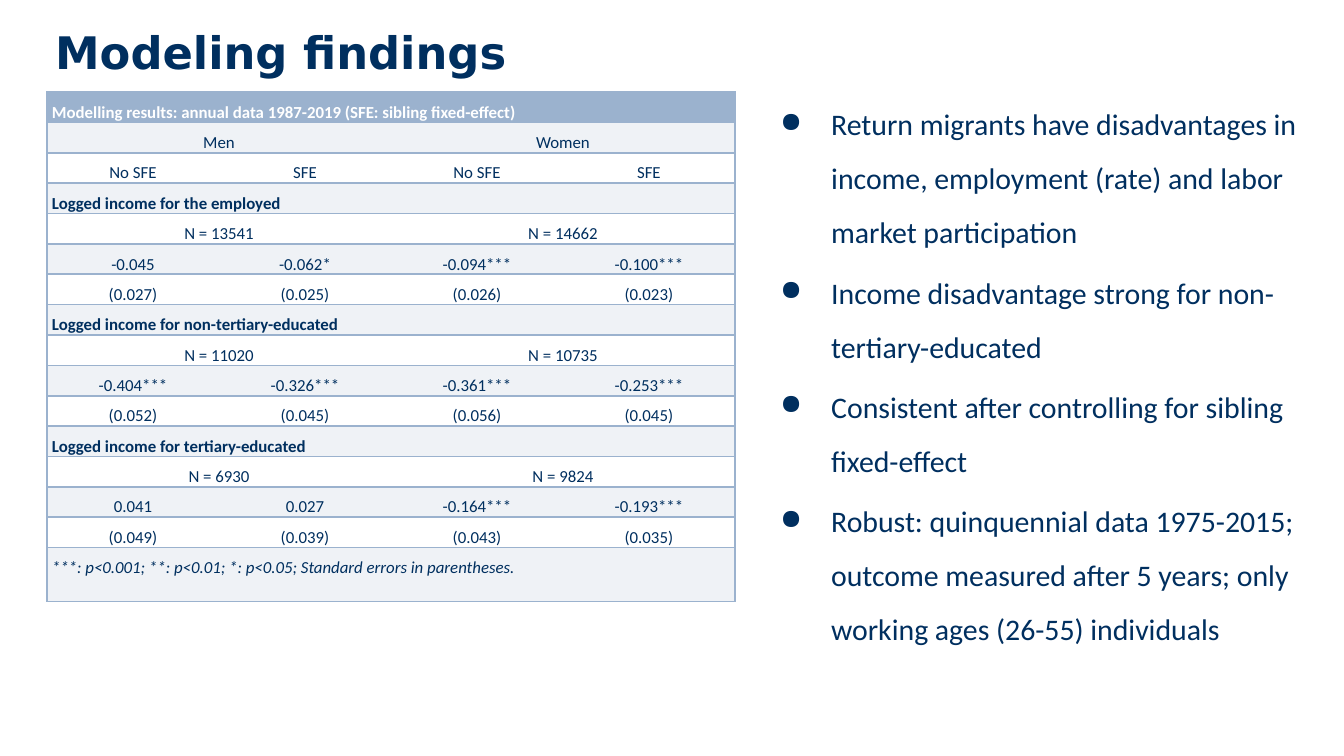
from lxml import etree
from pptx import Presentation, util as u
from pptx.dml.color import RGBColor
from pptx.enum import text
from pptx.oxml import ns

PX = 914400 / 134.4
NAVY, STEEL, PALE, WHITE = "002F5F", "9BB2CE", "EFF2F6", "FFFFFF"
COLUMNS = 4

# Each row shares the table's columns equally among its entries.
RESULTS = [
    ["Modelling results: annual data 1987-2019 (SFE: sibling fixed-effect)"],
    ["Men", "Women"],
    ["No SFE", "SFE", "No SFE", "SFE"],
    ["Logged income for the employed"],
    ["N = 13541", "N = 14662"],
    ["-0.045", "-0.062*", "-0.094***", "-0.100***"],
    ["(0.027)", "(0.025)", "(0.026)", "(0.023)"],
    ["Logged income for non-tertiary-educated"],
    ["N = 11020", "N = 10735"],
    ["-0.404***", "-0.326***", "-0.361***", "-0.253***"],
    ["(0.052)", "(0.045)", "(0.056)", "(0.045)"],
    ["Logged income for tertiary-educated"],
    ["N = 6930", "N = 9824"],
    ["0.041", "0.027", "-0.164***", "-0.193***"],
    ["(0.049)", "(0.039)", "(0.043)", "(0.035)"],
    ["***: p<0.001; **: p<0.01; *: p<0.05; Standard errors in parentheses."],
]
FINDINGS = [
    "Return migrants have disadvantages in income, employment (rate) and labor market participation",
    "Income disadvantage strong for non-tertiary-educated",
    "Consistent after controlling for sibling fixed-effect",
    "Robust: quinquennial data 1975-2015; outcome measured after 5 years; "
    "only working ages (26-55) individuals",
]


def px(length):
    return u.Emu(round(length * PX))


def color(hex_code):
    return RGBColor.from_string(hex_code)


def add_run(paragraph, words, size, ink=NAVY, font="Calibri", bold=False, italic=False):
    run = paragraph.add_run()
    run.text = words
    run.font.name, run.font.size = font, u.Pt(size)
    run.font.bold, run.font.italic = bold, italic
    run.font.color.rgb = color(ink)


def add_frame(slide, box):
    frame = slide.shapes.add_textbox(*map(px, box)).text_frame
    frame.word_wrap = True
    return frame


def add_title(slide, box):
    heading = add_frame(slide, box).paragraphs[0]
    add_run(heading, "Modeling findings", 24, font="DejaVu Sans", bold=True)


def set_bullet(paragraph, indent):
    props = paragraph._p.get_or_add_pPr()
    props.set("marL", str(px(indent)))
    props.set("indent", str(px(-indent)))
    etree.SubElement(props, ns.qn("a:buSzPct"), val="93000")
    etree.SubElement(props, ns.qn("a:buChar"), char="●")


def add_findings(slide, box):
    frame = add_frame(slide, box)
    for number, finding in enumerate(FINDINGS):
        paragraph = frame.add_paragraph() if number else frame.paragraphs[0]
        set_bullet(paragraph, 51)
        paragraph.line_spacing = u.Pt(29)
        if number:
            paragraph.space_before = u.Pt(3.2)
        add_run(paragraph, finding, 16)


def set_borders(cell, sides):
    """Rule the given sides (from "LRTB") and clear the others."""
    props = cell._tc.get_or_add_tcPr()
    for position, side in enumerate("LRTB"):
        line = etree.Element(ns.qn(f"a:ln{side}"), w=str(u.Pt(1)))
        if side in sides:
            fill = etree.SubElement(line, ns.qn("a:solidFill"))
            etree.SubElement(fill, ns.qn("a:srgbClr"), val=STEEL)
        else:
            etree.SubElement(line, ns.qn("a:noFill"))
        props.insert(position, line)


def style_cell(cell, fill, sides):
    cell.fill.solid()
    cell.fill.fore_color.rgb = color(fill)
    cell.margin_left = cell.margin_right = px(5)
    cell.margin_top = cell.margin_bottom = 0
    set_borders(cell, sides)


def add_results(slide, box):
    table = slide.shapes.add_table(len(RESULTS), COLUMNS, *map(px, box)).table
    footnote = len(RESULTS) - 1
    for column in table.columns:
        column.width = px(box[2] / COLUMNS)
    for r, entries in enumerate(RESULTS):
        table.rows[r].height = px(54 if r == footnote else 30)
        fill = STEEL if r == 0 else PALE if r % 2 else WHITE
        for c in range(COLUMNS):
            sides = "TB" + "L" * (c == 0) + "R" * (c == COLUMNS - 1)
            style_cell(table.cell(r, c), fill, sides)
        span = COLUMNS // len(entries)
        full_width = span == COLUMNS
        for e, entry in enumerate(entries):
            cell = table.cell(r, e * span)
            if span > 1:
                cell.merge(table.cell(r, (e + 1) * span - 1))
                set_sides = "TB" + "L" * (e == 0) + "R" * (e == len(entries) - 1)
                for line in cell._tc.tcPr.xpath("a:lnL|a:lnR|a:lnT|a:lnB"):
                    cell._tc.tcPr.remove(line)
                set_borders(cell, set_sides)
            paragraph = cell.text_frame.paragraphs[0]
            paragraph.line_spacing = 1.5
            paragraph.alignment = text.PP_ALIGN.LEFT if full_width else text.PP_ALIGN.CENTER
            add_run(paragraph, entry, 9, ink=NAVY if r else WHITE,
                    bold=full_width and r != footnote, italic=r == footnote)


def main():
    deck = Presentation()
    deck.slide_width, deck.slide_height = px(1344), px(756)
    slide = deck.slides.add_slide(deck.slide_layouts[6])
    add_title(slide, (42, 18, 1342, 117))
    add_findings(slide, (767, 81, 555, 677))
    add_results(slide, (47, 92, 688, 508))
    deck.save("out.pptx")


if __name__ == "__main__":
    main()
